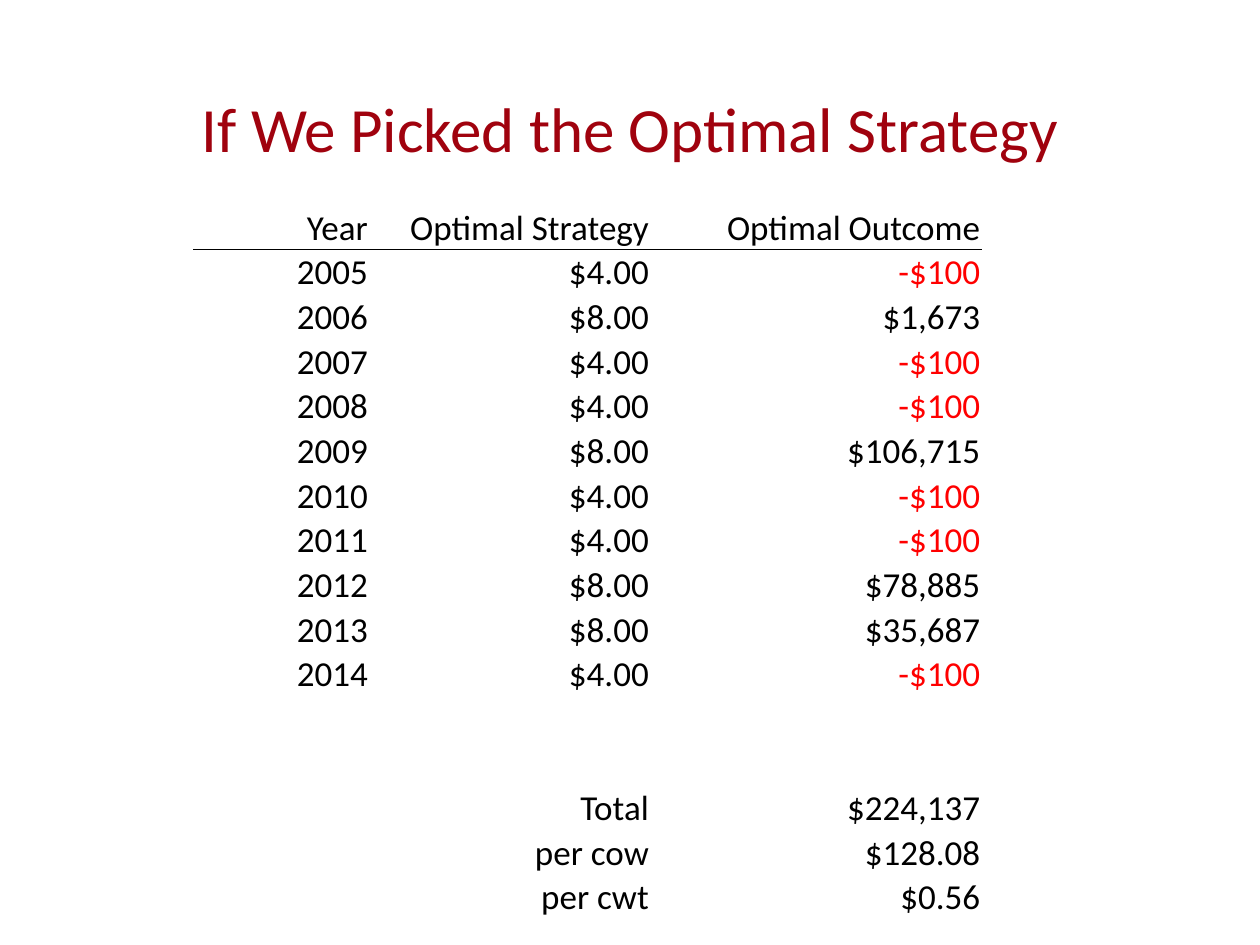
from pptx import Presentation
from pptx.dml.color import RGBColor as Rgb
from pptx.enum.text import MSO_ANCHOR as Anchor, PP_ALIGN as Align
from pptx.oxml import parse_xml
from pptx.oxml.ns import nsdecls
from pptx.util import Inches, Pt

COLORS = {"title": "A0020E", "text": "000000", "loss": "FF0000", "rule": "000000"}

HEADER = ("Year", "Optimal Strategy", "Optimal Outcome")
YEARS = [
    ("2005", "$4.00", "-$100"),
    ("2006", "$8.00", "$1,673"),
    ("2007", "$4.00", "-$100"),
    ("2008", "$4.00", "-$100"),
    ("2009", "$8.00", "$106,715"),
    ("2010", "$4.00", "-$100"),
    ("2011", "$4.00", "-$100"),
    ("2012", "$8.00", "$78,885"),
    ("2013", "$8.00", "$35,687"),
    ("2014", "$4.00", "-$100"),
]
SPACERS = [("", "", "")] * 2
SUMMARY = [
    ("", "Total", "$224,137"),
    ("", "per cow", "$128.08"),
    ("", "per cwt", "$0.56"),
]


class StrategySlide:
    """Holds the style and the current slide, and adds each kind of element."""

    font_name = "Calibri"
    title_size = 36
    table_size = 20

    def __init__(self, presentation):
        self.width = presentation.slide_width
        self.height = presentation.slide_height
        self.slide = presentation.slides.add_slide(presentation.slide_layouts[5])

    def box(self, left, top, width, height):
        return (
            int(left * self.width),
            int(top * self.height),
            int(width * self.width),
            int(height * self.height),
        )

    def set_text(self, text_frame, text, size, color, align):
        text_frame.text = text
        paragraph = text_frame.paragraphs[0]
        paragraph.alignment = align
        for run in paragraph.runs:
            run.font.name = self.font_name
            run.font.size = Pt(size)
            run.font.color.rgb = Rgb.from_string(COLORS[color])

    def title(self, text, share):
        shape = self.slide.shapes.title
        shape.left, shape.top, shape.width, shape.height = self.box(*share)
        shape.text_frame.vertical_anchor = Anchor.MIDDLE
        self.set_text(shape.text_frame, text, self.title_size, "title", Align.CENTER)

    def border(self, cell, side):
        line = parse_xml(
            f'<a:{side} {nsdecls("a")} w="{Pt(1)}"><a:solidFill>'
            f'<a:srgbClr val="{COLORS["rule"]}"/></a:solidFill></a:{side}>'
        )
        cell._tc.get_or_add_tcPr().insert(0, line)

    def cell(self, cell, text):
        cell.fill.background()
        cell.vertical_anchor = Anchor.BOTTOM
        cell.margin_left = cell.margin_right = cell.margin_top = Inches(0.01)
        cell.margin_bottom = 0
        color = "loss" if text.startswith("-") else "text"
        self.set_text(cell.text_frame, text, self.table_size, color, Align.RIGHT)

    def table(self, rows, share, column_shares):
        frame = self.slide.shapes.add_table(len(rows), len(rows[0]), *self.box(*share))
        table = frame.table
        table.first_row = table.horz_banding = False
        for column, column_share in zip(table.columns, column_shares):
            column.width = int(column_share * self.width)
        for row_index, row in enumerate(rows):
            for column_index, text in enumerate(row):
                self.cell(table.cell(row_index, column_index), text)
        for column_index in range(len(rows[0])):
            self.border(table.cell(0, column_index), "lnB")
            self.border(table.cell(1, column_index), "lnT")


def main():
    presentation = Presentation()
    presentation.slide_width = Inches(10)
    presentation.slide_height = Inches(7.5)
    slide = StrategySlide(presentation)
    slide.title("If We Picked the Optimal Strategy", (0.02, 0.07, 0.96, 0.13))
    rows = [HEADER, *YEARS, *SPACERS, *SUMMARY]
    slide.table(rows, (0.154, 0.217, 0.625, 0.756), (0.139, 0.223, 0.263))
    presentation.save("out.pptx")


if __name__ == "__main__":
    main()
